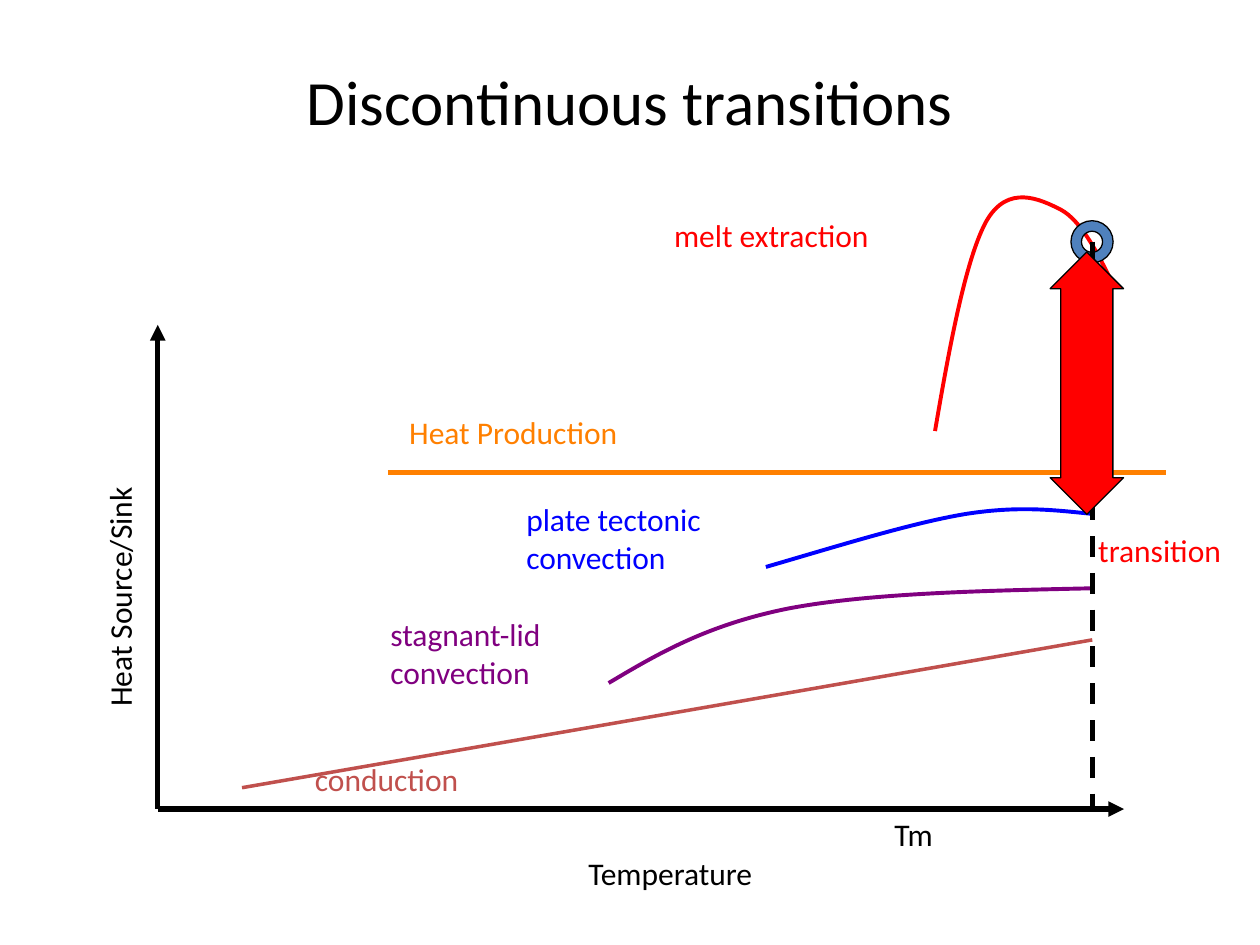
from lxml.etree import SubElement
from pptx import Presentation
from pptx.dml.color import RGBColor
from pptx.enum.dml import MSO_LINE
from pptx.enum.shapes import MSO_CONNECTOR, MSO_SHAPE
from pptx.enum.text import MSO_ANCHOR, PP_ALIGN
from pptx.oxml.ns import qn
from pptx.util import Cm, Pt

BLACK, RED, BLUE = "000000", "FF0000", "0000FF"
ORANGE, PURPLE, BRICK, STEEL = "FF8000", "800080", "C0504D", "4F81BD"


def rgb(hex_color):
    return RGBColor.from_string(hex_color)


class Diagram:
    """Holds the slide and the style its elements share."""

    font = "Calibri"
    label_size = 18

    def __init__(self, slide):
        self.shapes = slide.shapes

    def text(self, wording, left, top, width, height, color=BLACK, size=label_size):
        box = self.shapes.add_textbox(Cm(left), Cm(top), Cm(width), Cm(height))
        frame = box.text_frame
        frame.word_wrap = True
        frame.text = wording
        for paragraph in frame.paragraphs:
            paragraph.font.name = self.font
            paragraph.font.size = Pt(size)
            paragraph.font.color.rgb = rgb(color)
        return box

    def title(self, wording, left, top, width, height):
        frame = self.text(wording, left, top, width, height, size=36).text_frame
        frame.vertical_anchor = MSO_ANCHOR.MIDDLE
        frame.paragraphs[0].alignment = PP_ALIGN.CENTER

    def label(self, wording, left, top, width, color=BLACK, rotation=0):
        """Place a label whose height follows from its number of lines."""
        height = 0.25 + 1.02 * len(wording.split("\n"))
        self.text(wording, left, top, width, height, color).rotation = rotation

    def line(self, start, end, color=BLACK, arrow=False, dash=None):
        connector = self.shapes.add_connector(
            MSO_CONNECTOR.STRAIGHT, *map(Cm, start + end))
        connector.line.color.rgb = rgb(color)
        connector.line.width = Pt(3)
        if dash:
            connector.line.dash_style = dash
        if arrow:
            SubElement(connector.line._get_or_add_ln(), qn("a:tailEnd"), type="triangle")
        SubElement(connector._element.spPr, qn("a:effectLst"))

    def curve(self, points, color, width=2.25):
        """Draw cubic Bezier pieces: a start, then three points for each piece."""
        start, *rest = [(Cm(x), Cm(y)) for x, y in points]
        builder = self.shapes.build_freeform(*start)
        builder.add_line_segments(rest, close=False)
        shape = builder.convert_to_shape()
        shape.shadow.inherit = False
        shape.fill.background()
        shape.line.color.rgb = rgb(color)
        shape.line.width = Pt(width)

        outline = next(shape._element.iter(qn("a:path")))
        segments = outline.findall(qn("a:lnTo"))
        for first in range(0, len(segments), 3):
            bezier = SubElement(outline, qn("a:cubicBezTo"))
            for segment in segments[first:first + 3]:
                bezier.append(segment[0])
                outline.remove(segment)

    def preset(self, kind, left, top, width, height, fill, adjustments):
        shape = self.shapes.add_shape(kind, Cm(left), Cm(top), Cm(width), Cm(height))
        shape.shadow.inherit = False
        shape.fill.solid()
        shape.fill.fore_color.rgb = rgb(fill)
        shape.line.color.rgb = rgb(BLACK)
        shape.line.width = Pt(0.75)
        for index, value in enumerate(adjustments):
            shape.adjustments[index] = value


def main():
    deck = Presentation()
    deck.slide_width, deck.slide_height = Cm(25.4), Cm(19.05)
    diagram = Diagram(deck.slides.add_slide(deck.slide_layouts[6]))

    origin = (3.18, 16.31)
    melting_x = 22.02

    diagram.title("Discontinuous transitions", 1.9, 0.43, 21.59, 3.18)

    diagram.line(origin, (22.66, origin[1]), arrow=True)
    diagram.line(origin, (origin[0], 6.55), arrow=True)
    diagram.label("Temperature", 11.61, 17.09, 4.83)
    diagram.label("Heat Source/Sink", -0.69, 10.64, 6.45, rotation=270)
    diagram.label("Tm", 17.78, origin[1], 1.68)

    diagram.curve([(4.88, 15.88), (4.88, 15.88), (13.44, 14.4), (melting_x, 12.9)],
                  BRICK, width=2)
    diagram.label("conduction", 6.1, 15.19, 4.27, BRICK)

    diagram.label("plate tectonic\nconvection", 10.36, 9.96, 5.03, BLUE)
    diagram.label("melt extraction", 13.34, 4.24, 5.59, RED)
    diagram.curve([(18.85, 8.69),
                   (19.15, 6.93), (19.48, 5.18), (19.89, 4.45),
                   (20.32, 3.71), (20.96, 4.01), (21.39, 4.23),
                   (21.79, 4.45), (22.12, 5.08), (22.43, 5.72)], RED)
    diagram.curve([(15.44, 11.43),
                   (16.92, 11), (18.39, 10.54), (19.48, 10.36),
                   (20.57, 10.19), (21.29, 10.29), (melting_x, 10.36)], BLUE)
    diagram.curve([(12.27, 13.77),
                   (13.26, 13.18), (14.25, 12.6), (15.88, 12.27),
                   (17.5, 11.96), (19.76, 11.91), (melting_x, 11.86)], PURPLE)
    diagram.label("stagnant-lid\nconvection", 7.62, 12.27, 4.5, PURPLE)

    diagram.line((7.82, 9.53), (23.5, 9.53), ORANGE)
    diagram.label("Heat Production", 8, 8.2, 6.05, ORANGE)

    diagram.preset(MSO_SHAPE.DONUT, 21.59, 4.45, 0.85, 0.85, STEEL, [0.25])
    diagram.line((melting_x, 4.87), (melting_x, origin[1]), dash=MSO_LINE.DASH)
    diagram.preset(MSO_SHAPE.UP_DOWN_ARROW, 21.17, 5.08, 1.48, 5.29, RED, [0.5, 0.71])
    diagram.label("transition", 21.89, 10.59, 3.71, RED)

    deck.save("out.pptx")


if __name__ == "__main__":
    main()
